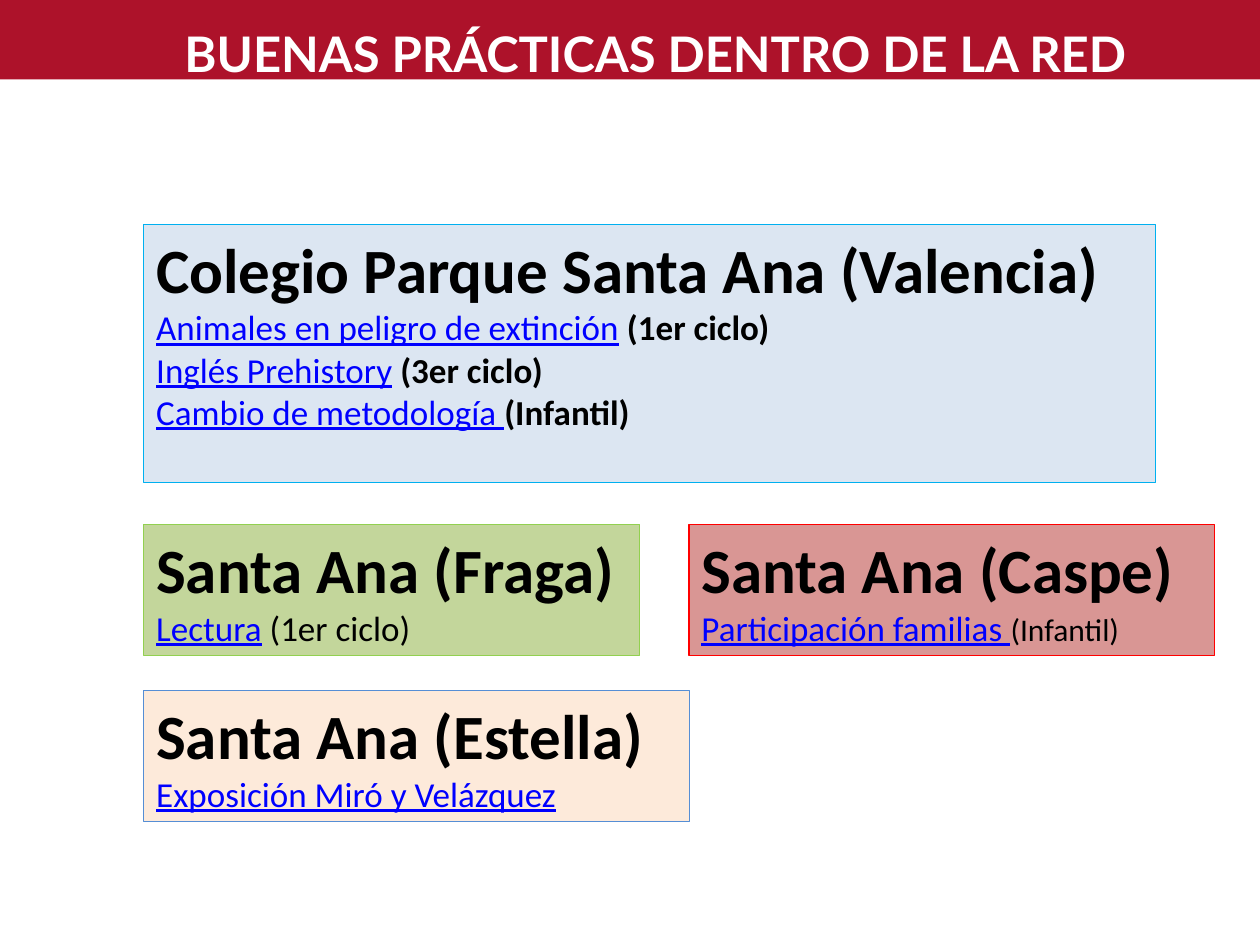
from dataclasses import dataclass

import pptx
import pptx.dml.color
import pptx.enum.shapes
import pptx.enum.text
import pptx.util

Cm, Pt = pptx.util.Cm, pptx.util.Pt
WIDE, HIGH = 25.4, 19.05
LEFT, RIGHT = 2.9, 13.89
TOP, MID, LOW = 4.52, 10.57, 13.92
SHORT = 2.64


@dataclass
class Item:
    link: str
    note: str = ""
    bold: bool = False
    size: int = 20


@dataclass
class Card:
    left: float
    top: float
    width: float
    height: float
    fill: str
    line: str
    head: str
    items: list[Item]


CARDS = [
    Card(LEFT, TOP, 20.4, 5.21, "DCE6F2", "00B0F0",
         "Colegio Parque Santa Ana (Valencia)",
         [Item("Animales en peligro de extinción", " (1er ciclo)", True),
          Item("Inglés Prehistory", " (3er ciclo)", True),
          Item("Cambio de metodología ", "(Infantil)", True)]),
    Card(LEFT, MID, 10, SHORT, "C3D69B", "92D050", "Santa Ana (Fraga)",
         [Item("Lectura", " (1er ciclo)")]),
    Card(LEFT, LOW, 11, SHORT, "FDEADA", "558ED5", "Santa Ana (Estella)",
         [Item("Exposición Miró y Velázquez")]),
    Card(RIGHT, MID, 10.59, SHORT, "D99694", "FF0000", "Santa Ana (Caspe)",
         [Item("Participación familias ", "(Infantil)", size=18)]),
]


def paint(part, tone: str) -> None:
    """Give a fill or a font a solid colour."""
    if hasattr(part, "solid"):
        part.solid()
        part.fore_color.rgb = pptx.dml.color.RGBColor.from_string(tone)
    else:
        part.color.rgb = pptx.dml.color.RGBColor.from_string(tone)


def style(para, face: str, size: int, tone: str, bold: bool) -> None:
    para.font.name = face
    para.font.size = Pt(size)
    para.font.bold = bold
    paint(para.font, tone)


def add_rect(slide, left: float, top: float, width: float, height: float,
             fill: str):
    rect = slide.shapes.add_shape(
        pptx.enum.shapes.MSO_SHAPE.RECTANGLE,
        Cm(left), Cm(top), Cm(width), Cm(height))
    rect.shadow.inherit = False
    paint(rect.fill, fill)
    return rect


def add_title(slide, text: str) -> None:
    box = slide.shapes.add_textbox(Cm(0.51), Cm(0), Cm(WIDE), Cm(1.8))
    box.text_frame.word_wrap = True
    para = box.text_frame.paragraphs[0]
    para.text = text
    para.alignment = pptx.enum.text.PP_ALIGN.CENTER
    para.line_spacing = 1.3
    style(para, "Lato", 28, "FFFFFF", True)


def add_item(para, item: Item) -> None:
    para.alignment = pptx.enum.text.PP_ALIGN.LEFT
    style(para, "Calibri", 20, "000000", False)
    link = para.add_run()
    link.text = item.link
    link.font.underline = True
    paint(link.font, "0000FF")
    if item.note:
        note = para.add_run()
        note.text = item.note
        note.font.bold = item.bold
        note.font.size = Pt(item.size)


def add_card(slide, card: Card) -> None:
    rect = add_rect(slide, card.left, card.top, card.width, card.height,
                    card.fill)
    paint(rect.line, card.line)
    rect.line.width = Pt(0.75)
    frame = rect.text_frame
    frame.word_wrap = True
    frame.vertical_anchor = pptx.enum.text.MSO_ANCHOR.TOP
    head = frame.paragraphs[0]
    head.text = card.head
    head.alignment = pptx.enum.text.PP_ALIGN.LEFT
    style(head, "Calibri", 36, "000000", True)
    for item in card.items:
        add_item(frame.add_paragraph(), item)


def main() -> None:
    deck = pptx.Presentation()
    deck.slide_width, deck.slide_height = Cm(WIDE), Cm(HIGH)
    slide = deck.slides.add_slide(deck.slide_layouts[6])
    band = add_rect(slide, 0, 0, WIDE, 1.6, "AD122A")
    band.line.fill.background()
    add_title(slide, "BUENAS PRÁCTICAS DENTRO DE LA RED")
    for card in CARDS:
        add_card(slide, card)
    deck.save("out.pptx")


if __name__ == "__main__":
    main()
